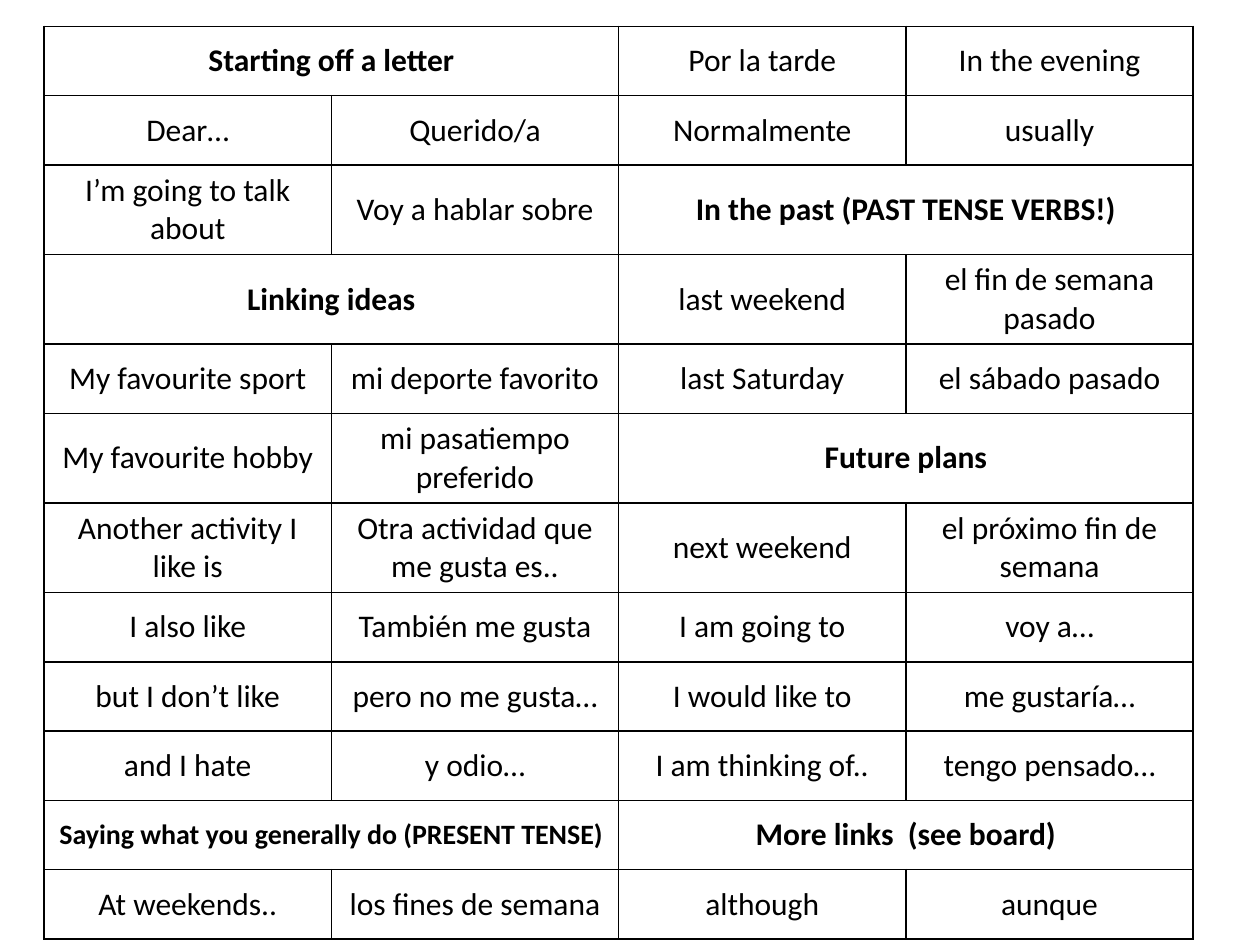
from dataclasses import dataclass

from lxml import etree
from pptx import Presentation
from pptx.dml.color import RGBColor
from pptx.enum.text import MSO_ANCHOR, PP_ALIGN
from pptx.oxml.ns import qn
from pptx.util import Inches, Pt

CENTER = PP_ALIGN.CENTER
MIDDLE = MSO_ANCHOR.MIDDLE


@dataclass(frozen=True)
class Theme:
    font: str = "Calibri"
    ink: str = "000000"
    paper: str = "FFFFFF"
    body: int = 18
    small: int = 16
    border: int = 1


THEME = Theme()
SMALL_HEADINGS = {"Saying what you generally do (PRESENT TENSE)"}

# Each row holds a left and a right half: a heading alone, or a pair of phrases.
ROWS = [
    (["Starting off a letter"], ["Por la tarde", "In the evening"]),
    (["Dear…", "Querido/a"], ["Normalmente", "usually"]),
    (["I’m going to talk about", "Voy a hablar sobre"], ["In the past (PAST TENSE VERBS!)"]),
    (["Linking ideas"], ["last weekend", "el fin de semana pasado"]),
    (["My favourite sport", "mi deporte favorito"], ["last Saturday", "el sábado pasado"]),
    (["My favourite hobby", "mi pasatiempo preferido"], ["Future plans"]),
    (["Another activity I like is", "Otra actividad que me gusta es.."],
     ["next weekend", "el próximo fin de semana"]),
    (["I also like", "También me gusta"], ["I am going to", "voy a…"]),
    (["but I don’t like", "pero no me gusta…"], ["I would like to", "me gustaría…"]),
    (["and I hate", "y odio…"], ["I am thinking of..", "tengo pensado…"]),
    (["Saying what you generally do (PRESENT TENSE)"], ["More links  (see board)"]),
    (["At weekends..", "los fines de semana"], ["although", "aunque"]),
]
COLUMNS = 4
LEFT, TOP = 0.35, 0.21
COLUMN_WIDTH, ROW_HEIGHT = 2.28, 0.55


def write(cell, text, size=THEME.body, bold=False):
    cell.vertical_anchor = MIDDLE
    para = cell.text_frame.paragraphs[0]
    para.alignment = CENTER
    span = para.add_run()
    span.text = text
    span.font.name = THEME.font
    span.font.size = Pt(size)
    span.font.bold = bold
    span.font.color.rgb = RGBColor.from_string(THEME.ink)


def style_cell(cell):
    cell.fill.solid()
    cell.fill.fore_color.rgb = RGBColor.from_string(THEME.paper)
    properties = cell._tc.get_or_add_tcPr()
    for position, side in enumerate(("a:lnL", "a:lnR", "a:lnT", "a:lnB")):
        line = etree.Element(qn(side), w=str(Pt(THEME.border)))
        fill = etree.SubElement(line, qn("a:solidFill"))
        etree.SubElement(fill, qn("a:srgbClr"), val=THEME.ink)
        properties.insert(position, line)


def main():
    deck = Presentation()
    deck.slide_width, deck.slide_height = Inches(10), Inches(7.5)
    page = deck.slides.add_slide(deck.slide_layouts[6])
    frame = page.shapes.add_table(
        len(ROWS), COLUMNS, Inches(LEFT), Inches(TOP),
        Inches(COLUMN_WIDTH * COLUMNS), Inches(ROW_HEIGHT * len(ROWS)))
    table = frame.table
    table.first_row = table.horz_banding = False
    for column in table.columns:
        column.width = Inches(COLUMN_WIDTH)
    for row in table.rows:
        row.height = Inches(ROW_HEIGHT)
    for cell in table.iter_cells():
        style_cell(cell)

    for row, halves in enumerate(ROWS):
        for half, texts in enumerate(halves):
            first = half * 2
            heading = len(texts) == 1
            if heading:
                table.cell(row, first).merge(table.cell(row, first + 1))
            for offset, text in enumerate(texts):
                size = THEME.small if text in SMALL_HEADINGS else THEME.body
                write(table.cell(row, first + offset), text, size=size, bold=heading)

    deck.save("out.pptx")


if __name__ == "__main__":
    main()
